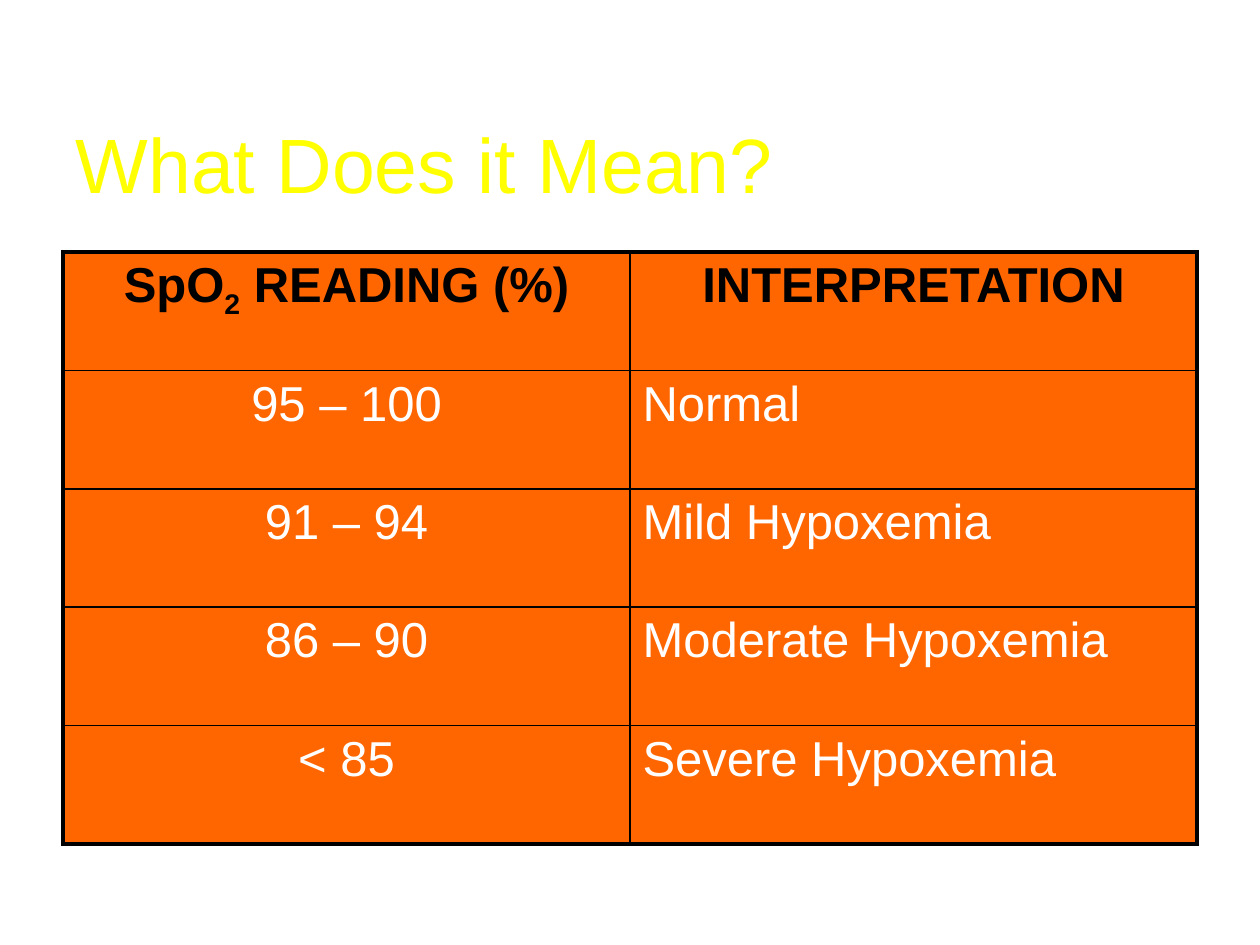
from dataclasses import dataclass

from lxml.etree import SubElement as Sub
from pptx import Presentation
from pptx.dml.color import RGBColor as RGB
from pptx.enum.text import MSO_ANCHOR as Anchor, MSO_AUTO_SIZE as Auto, PP_ALIGN as Align
from pptx.oxml import parse_xml
from pptx.oxml.ns import nsdecls, qn
from pptx.util import Pt


@dataclass(frozen=True)
class Theme:
    font: str = "Arial"
    title: str = "FFFF00"
    fill: str = "FF6600"
    dark: str = "000000"
    light: str = "FFFFFF"
    head: float = 44
    body: float = 28
    thick: float = 2.25
    thin: float = 1


THEME = Theme()
TITLE = "What Does it Mean?"
ROWS = [
    ([("SpO", 0), ("2", -25000), (" READING (%)", 0)], [("INTERPRETATION", 0)]),
    ([("95 – 100", 0)], [("Normal", 0)]),
    ([("91 – 94", 0)], [("Mild Hypoxemia", 0)]),
    ([("86 – 90", 0)], [("Moderate Hypoxemia", 0)]),
    ([("< 85", 0)], [("Severe Hypoxemia", 0)]),
]


def add_run(para, text, size, color, bold=False, base=0):
    run = para.add_run()
    run.text = text
    font = run.font
    font.name, font.size, font.bold = THEME.font, Pt(size), bold
    font.color.rgb = RGB.from_string(color)
    if base:
        run._r.get_or_add_rPr().set("baseline", str(base))
    return run


def add_shade(run):
    glow = parse_xml(
        f'<a:effectLst {nsdecls("a")}><a:outerShdw dist="35921" dir="2700000">'
        f'<a:srgbClr val="{THEME.dark}"/></a:outerShdw></a:effectLst>'
    )
    run._r.get_or_add_rPr().find(qn("a:solidFill")).addnext(glow)


def add_title(slide, x, y, w, h):
    shape = slide.shapes.title
    shape.left, shape.top, shape.width, shape.height = Pt(x), Pt(y), Pt(w), Pt(h)
    frame = shape.text_frame
    frame.auto_size, frame.word_wrap = Auto.NONE, True
    frame.vertical_anchor = Anchor.MIDDLE
    para = frame.paragraphs[0]
    para.alignment = Align.LEFT
    add_shade(add_run(para, TITLE, THEME.head, THEME.title))


def add_edge(cell, side, width):
    line = Sub(cell._tc.get_or_add_tcPr(), qn(f"a:ln{side}"), w=str(Pt(width)))
    Sub(Sub(line, qn("a:solidFill")), qn("a:srgbClr"), val=THEME.dark)


def add_grid(slide, x, y, w, h):
    count, wide = len(ROWS), len(ROWS[0])
    grid = slide.shapes.add_table(count, wide, Pt(x), Pt(y), Pt(w), Pt(h)).table
    grid.first_row = grid.horz_banding = False
    for col in grid.columns:
        col.width = Pt(w / wide)
    for i, row in enumerate(ROWS):
        grid.rows[i].height = Pt(h / count)
        for j, runs in enumerate(row):
            cell = grid.cell(i, j)
            outer = {"L": j == 0, "R": j == wide - 1, "T": i == 0, "B": i == count - 1}
            for side, edge in outer.items():
                add_edge(cell, side, THEME.thick if edge else THEME.thin)
            cell.fill.solid()
            cell.fill.fore_color.rgb = RGB.from_string(THEME.fill)
            head = i == 0
            para = cell.text_frame.paragraphs[0]
            para.alignment = Align.CENTER if head or j == 0 else Align.LEFT
            color = THEME.dark if head else THEME.light
            for text, base in runs:
                add_run(para, text, THEME.body, color, head, base)


def main():
    deck = Presentation()
    deck.slide_width, deck.slide_height = Pt(720), Pt(540)
    slide = deck.slides.add_slide(deck.slide_layouts[5])
    add_title(slide, 36, 48, 648, 90)
    add_grid(slide, 36, 144, 648, 338.4)
    deck.save("out.pptx")


if __name__ == "__main__":
    main()
